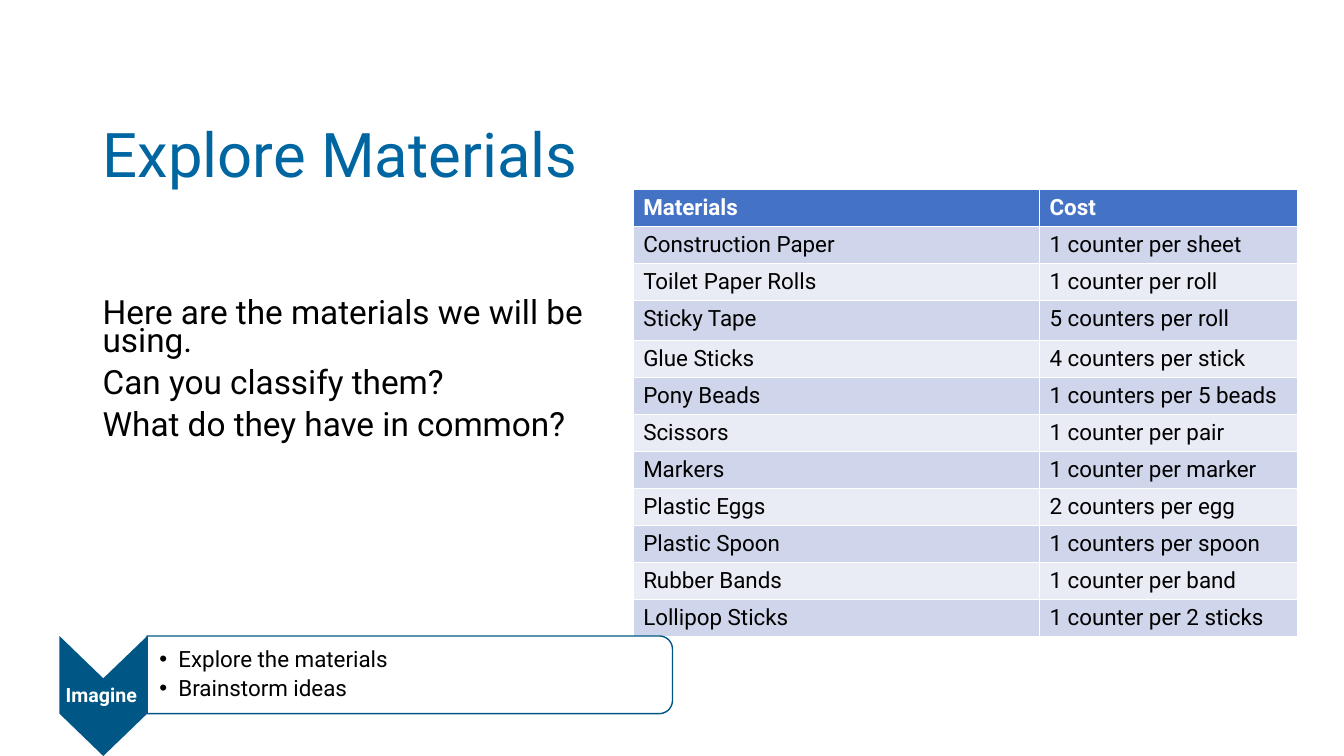
from dataclasses import dataclass
from math import cos, pi, sin

from lxml import etree
from pptx import Presentation
from pptx.dml.color import RGBColor
from pptx.enum.text import MSO_ANCHOR, PP_ALIGN
from pptx.oxml.ns import qn
from pptx.util import Inches, Pt

MIDDLE, TOP = MSO_ANCHOR.MIDDLE, MSO_ANCHOR.TOP
LEFT, CENTER = PP_ALIGN.LEFT, PP_ALIGN.CENTER

TITLE = "Explore Materials"
PROMPTS = [
    "Here are the materials we will be using.",
    "Can you classify them?",
    "What do they have in common?",
]
MATERIALS = [
    ("Materials", "Cost"),
    ("Construction Paper", "1 counter per sheet"),
    ("Toilet Paper Rolls", "1 counter per roll"),
    ("Sticky Tape", "5 counters per roll"),
    ("Glue Sticks", "4 counters per stick"),
    ("Pony Beads", "1 counters per 5 beads"),
    ("Scissors", "1 counter per pair"),
    ("Markers", "1 counter per marker"),
    ("Plastic Eggs", "2 counters per egg"),
    ("Plastic Spoon", "1 counters per spoon"),
    ("Rubber Bands", "1 counter per band"),
    ("Lollipop Sticks", "1 counter per 2 sticks"),
]
STAGE = "Imagine"
STEPS = ["Explore the materials", "Brainstorm ideas"]


@dataclass(frozen=True)
class Theme:
    font: str = "Roboto"
    bullet_font: str = "Arial"
    title: str = "0066A1"
    ink: str = "000000"
    white: str = "FFFFFF"
    stage: str = "005786"
    header: str = "4472C4"
    bands: tuple = ("E9EBF5", "CFD5EA")
    title_size: float = 44
    prompt_size: float = 23.8
    text_size: float = 16
    stage_size: float = 14


THEME = Theme()
WIDTH, HEIGHT = 13.33, 7.5
MARGIN = 0.92
TITLE_BOX = (MARGIN, 0.84, WIDTH - 2 * MARGIN, 1.45)
PROMPT_BOX = (MARGIN, 2.95, 5.67, 3.5)
TABLE_LEFT, TABLE_TOP = 6.28, 1.88
COLUMNS = (4.03, 2.56)
ROW, TALL_ROW, TALL_INDEX = 0.36, 0.4, 3
STAGE_LEFT, STAGE_TOP, STAGE_WIDTH = 0.59, 6.31, 0.87
STAGE_SIDE, STAGE_NOTCH = 0.77, 0.42
STEPS_WIDTH, CORNER, ARC_STEPS = 5.21, 0.13, 12


def color(value):
    return RGBColor.from_string(value)


def write(frame, lines, size, ink=THEME.ink, bold=False, align=LEFT, anchor=TOP,
          spacing=1.0, before=0, after=0, inset=(0.1, 0.05, 0.1, 0.05), indent=0):
    frame.word_wrap = True
    frame.vertical_anchor = anchor
    (frame.margin_left, frame.margin_top,
     frame.margin_right, frame.margin_bottom) = map(Inches, inset)
    for index, line in enumerate(lines):
        para = frame.paragraphs[0] if index == 0 else frame.add_paragraph()
        para.alignment = align
        para.line_spacing = spacing
        para.space_before = Pt(before if index else 0)
        para.space_after = Pt(after)
        if indent:
            props = para._p.get_or_add_pPr()
            props.set("marL", str(Inches(indent)))
            props.set("indent", str(-Inches(indent)))
            etree.SubElement(props, qn("a:buFont")).set("typeface", THEME.bullet_font)
            etree.SubElement(props, qn("a:buChar")).set("char", "•")
        span = para.add_run()
        span.text = line
        span.font.name = THEME.font
        span.font.size = Pt(size)
        span.font.bold = bold
        span.font.color.rgb = color(ink)


def add_text(page, area, lines, size, **style):
    box = page.shapes.add_textbox(*map(Inches, area))
    write(box.text_frame, lines, size, **style)


def add_outline(page, points, fill, line=None):
    corners = [(Inches(x), Inches(y)) for x, y in points]
    builder = page.shapes.build_freeform(*corners[0])
    builder.add_line_segments(corners[1:], close=True)
    shape = builder.convert_to_shape()
    shape.shadow.inherit = False
    shape.fill.solid()
    shape.fill.fore_color.rgb = color(fill)
    if line:
        shape.line.color.rgb = color(line)
        shape.line.width = Pt(1)
    else:
        shape.line.fill.background()
    return shape


def add_materials(page):
    heights = [TALL_ROW if row == TALL_INDEX else ROW for row in range(len(MATERIALS))]
    table = page.shapes.add_table(
        len(MATERIALS), len(COLUMNS), Inches(TABLE_LEFT), Inches(TABLE_TOP),
        Inches(sum(COLUMNS)), Inches(sum(heights))).table
    for column, width in zip(table.columns, COLUMNS):
        column.width = Inches(width)
    for row, entries in enumerate(MATERIALS):
        table.rows[row].height = Inches(heights[row])
        header = row == 0
        for column, entry in enumerate(entries):
            cell = table.cell(row, column)
            cell.fill.solid()
            cell.fill.fore_color.rgb = color(THEME.header if header else THEME.bands[row % 2])
            write(cell.text_frame, [entry], THEME.text_size, bold=header,
                  ink=THEME.white if header else THEME.ink)


def add_stage(page):
    left, right = STAGE_LEFT, STAGE_LEFT + STAGE_WIDTH
    middle = (left + right) / 2
    top, bottom = STAGE_TOP, STAGE_TOP + STAGE_SIDE
    chevron = add_outline(page, [
        (left, top), (middle, top + STAGE_NOTCH), (right, top),
        (right, bottom), (middle, bottom + STAGE_NOTCH), (left, bottom)], THEME.stage)
    write(chevron.text_frame, [STAGE], THEME.stage_size, ink=THEME.white, bold=True,
          align=CENTER, anchor=MIDDLE, spacing=0.9, inset=(0.01, 0, 0.05, 0))

    center = right + STEPS_WIDTH - CORNER
    angles = [pi / 2 * step / ARC_STEPS for step in range(ARC_STEPS + 1)]
    upper = [(center + CORNER * sin(angle), top + CORNER * (1 - cos(angle)))
             for angle in angles]
    lower = [(x, top + bottom - y) for x, y in reversed(upper)]
    panel = add_outline(page, [(right, top), *upper, *lower, (right, bottom)],
                        THEME.white, THEME.stage)
    write(panel.text_frame, STEPS, THEME.text_size, anchor=MIDDLE, spacing=0.9,
          after=3, inset=(0.12, 0.05, 0.05, 0.05), indent=0.19)


def main():
    deck = Presentation()
    deck.slide_width, deck.slide_height = Inches(WIDTH), Inches(HEIGHT)
    page = deck.slides.add_slide(deck.slide_layouts[6])
    add_text(page, TITLE_BOX, [TITLE], THEME.title_size, ink=THEME.title,
             anchor=MIDDLE, spacing=0.9)
    add_text(page, PROMPT_BOX, PROMPTS, THEME.prompt_size, spacing=0.7, before=10)
    add_materials(page)
    add_stage(page)
    deck.save("out.pptx")


if __name__ == "__main__":
    main()
